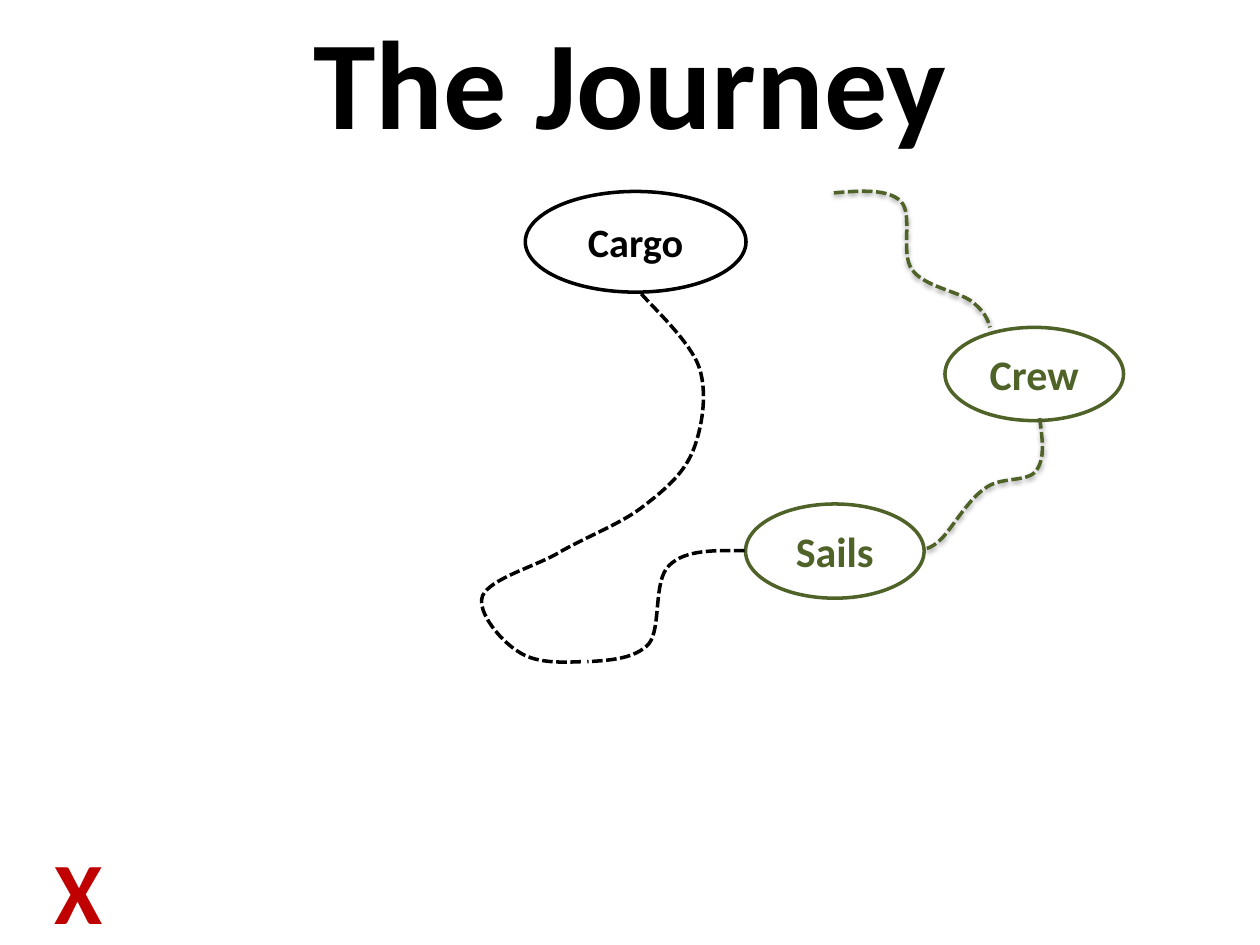
"""Build the journey slide: a title, three stops and the dashed routes between them."""
from dataclasses import dataclass

from lxml import etree
from pptx import Presentation
from pptx import util as u
from pptx.dml.color import RGBColor
from pptx.enum import dml, shapes, text
from pptx.oxml.ns import qn


@dataclass(frozen=True)
class Theme:
    """Colours, type sizes and line width of the slide."""
    face: str = "Calibri"
    ink: str = "000000"
    green: str = "4F6228"
    red: str = "C00000"
    head: int = 72
    mark: int = 50
    stop: int = 24
    cargo: int = 23
    line: int = 2


class Deck:
    """Draw each kind of element on the current slide."""

    def __init__(self, theme):
        """Start a deck with one title slide."""
        self.theme = theme
        self.prs = Presentation()
        self.prs.slide_width, self.prs.slide_height = u.Cm(25.4), u.Cm(19.05)
        self.slide = self.prs.slides.add_slide(self.prs.slide_layouts[5])

    def label(self, shape, words, size, tint, align, fit=text.MSO_AUTO_SIZE.NONE):
        """Put one bold line of text in a shape."""
        frame = shape.text_frame
        frame.word_wrap, frame.auto_size = True, fit
        para = frame.paragraphs[0]
        para.alignment = align
        run = para.add_run()
        run.text = words
        look = {"name": self.theme.face, "size": u.Pt(size), "bold": True}
        for key, value in look.items():
            setattr(run.font, key, value)
        run.font.color.rgb = RGBColor.from_string(tint)

    def title(self, words, box):
        """Place the slide title."""
        shape = self.slide.shapes.title
        for key, value in zip(("left", "top", "width", "height"), box):
            setattr(shape, key, u.Cm(value))
        shape.text_frame.vertical_anchor = text.MSO_ANCHOR.MIDDLE
        self.label(shape, words, self.theme.head, self.theme.ink, text.PP_ALIGN.CENTER)

    def mark(self, words, box):
        """Add the red mark."""
        shape = self.slide.shapes.add_textbox(*map(u.Cm, box))
        self.label(shape, words, self.theme.mark, self.theme.red, text.PP_ALIGN.LEFT,
                   text.MSO_AUTO_SIZE.SHAPE_TO_FIT_TEXT)

    def trace(self, shape, tint):
        """Leave a shape with an outline only."""
        shape.shadow.inherit = False
        shape.fill.background()
        shape.line.color.rgb = RGBColor.from_string(tint)
        shape.line.width = u.Pt(self.theme.line)

    def stop(self, words, box, size, tint):
        """Add a labelled oval."""
        shape = self.slide.shapes.add_shape(shapes.MSO_SHAPE.OVAL, *map(u.Cm, box))
        self.trace(shape, tint)
        shape.text_frame.vertical_anchor = text.MSO_ANCHOR.MIDDLE
        self.label(shape, words, size, tint, text.PP_ALIGN.CENTER)

    def route(self, dots, tint, shade=False):
        """Add a dashed Bezier curve from points in hundredths of a centimetre."""
        pen = self.slide.shapes.build_freeform(*dots[0], scale=u.Cm(0.01))
        pen.add_line_segments(dots[1:], close=False)
        shape = pen.convert_to_shape()
        self.trace(shape, tint)
        shape.line.dash_style = dml.MSO_LINE.SQUARE_DOT
        track = next(shape.element.iter(qn("a:path")))
        legs = track.findall(qn("a:lnTo"))
        for i in range(0, len(legs), 3):
            curve = etree.SubElement(track, qn("a:cubicBezTo"))
            for leg in legs[i:i + 3]:
                curve.append(leg[0])
                track.remove(leg)
        if shade:
            self.shade(shape)

    def shade(self, shape):
        """Cast a soft shadow straight down."""
        look = {"blurRad": u.Pt(3.1), "dist": u.Pt(1.6), "dir": 5400000, "rotWithShape": 0}
        base = next(shape.element.iter(qn("a:effectLst")))
        cast = etree.SubElement(base, qn("a:outerShdw"))
        for key, value in look.items():
            cast.set(key, str(int(value)))
        tone = etree.SubElement(cast, qn("a:srgbClr"), val=self.theme.ink)
        etree.SubElement(tone, qn("a:alpha"), val="38000")


NORTH = [(1681, 389), (1737, 384), (1791, 381), (1816, 406), (1842, 432), (1814, 511),
         (1839, 544), (1862, 577), (1930, 587), (1958, 607), (1984, 627), (1991, 643),
         (1996, 660)]
EAST = [(2096, 843), (2101, 884), (2108, 925), (2088, 950), (2070, 973), (2014, 960),
        (1984, 986), (1951, 1008), (1918, 1067), (1897, 1087), (1877, 1107), (1862, 1107),
        (1862, 1107)]
SOUTH = [(1501, 1110), (1443, 1110), (1382, 1107), (1349, 1140), (1316, 1171), (1334, 1265),
         (1308, 1298), (1280, 1328), (1232, 1331), (1184, 1334)]
WEST = [(1171, 1334), (1123, 1336), (1077, 1336), (1044, 1313), (1011, 1293), (960, 1234),
        (973, 1201), (988, 1168), (1067, 1146), (1120, 1118), (1171, 1087), (1245, 1059),
        (1290, 1026), (1336, 991), (1377, 958), (1397, 909), (1415, 864), (1427, 795),
        (1410, 742), (1392, 688), (1313, 617), (1290, 589)]


def main():
    """Draw the slide and save it."""
    theme = Theme()
    deck = Deck(theme)
    deck.title("The Journey", (1.27, 0.43, 22.86, 2.34))
    deck.route(NORTH, theme.green, shade=True)
    deck.stop("Crew", (19.05, 6.6, 3.6, 1.88), theme.stop, theme.green)
    deck.route(EAST, theme.green, shade=True)
    deck.stop("Sails", (15.03, 10.16, 3.6, 1.9), theme.stop, theme.green)
    deck.mark("X", (0.84, 16.74, 2.74, 2.39))
    for dots in (SOUTH, WEST):
        deck.route(dots, theme.ink)
    deck.stop("Cargo", (10.59, 3.86, 4.45, 2.03), theme.cargo, theme.ink)
    deck.prs.save("out.pptx")


if __name__ == "__main__":
    main()
